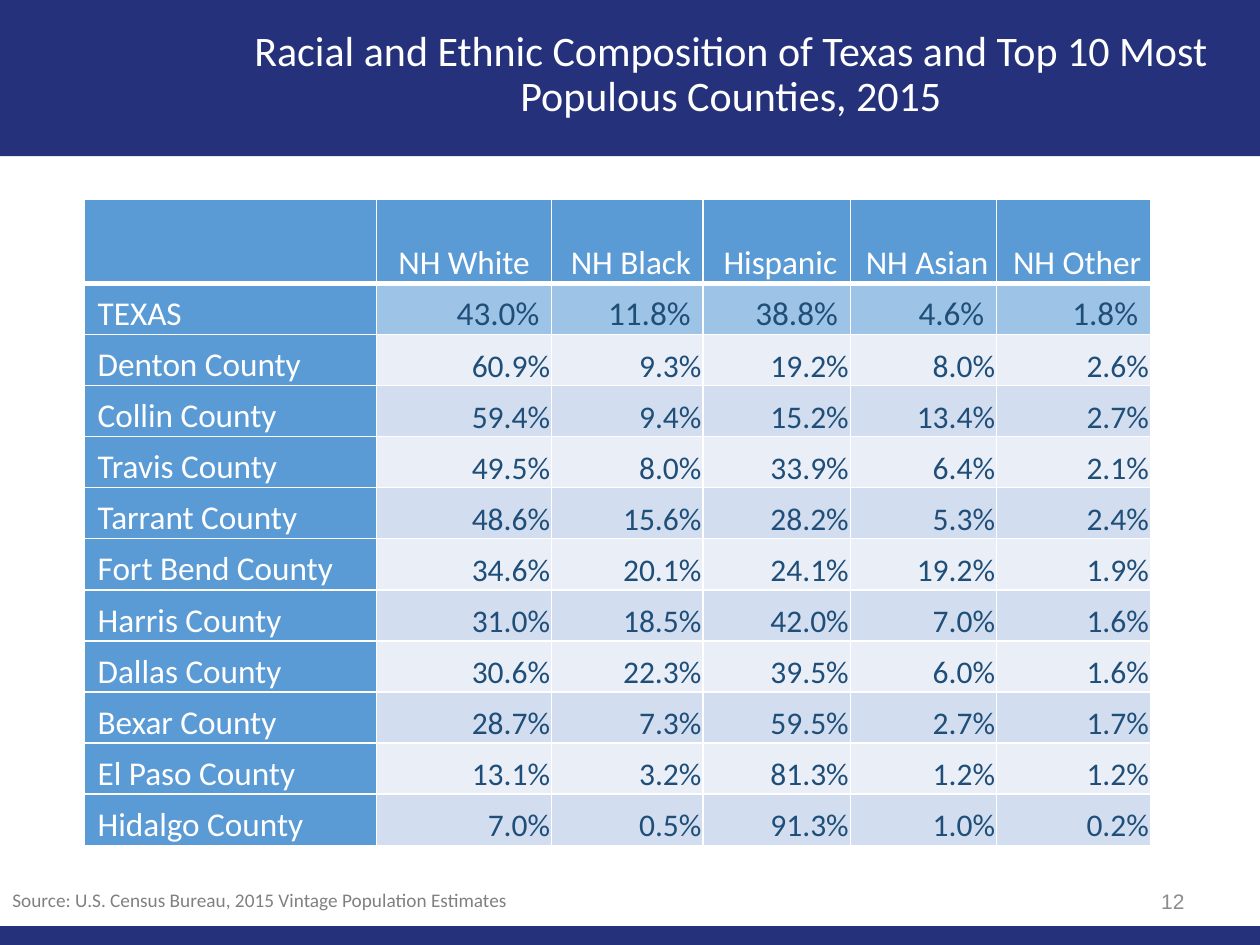
from lxml import etree
from pptx import Presentation
from pptx import util as u
from pptx.dml.color import RGBColor
from pptx.enum import shapes, text
from pptx.oxml import ns

COLOURS = {
    "navy": "25327B",
    "white": "FFFFFF",
    "heading": "5B9BD5",
    "state": "9DC3E6",
    "light": "EAEFF7",
    "dark": "D2DEEF",
    "figure": "1F4E79",
    "source": "808080",
    "number": "8C8C8C",
}
GROUPS = ["NH White", "NH Black", "Hispanic", "NH Asian", "NH Other"]
SHARES = [
    ("TEXAS", 43.0, 11.8, 38.8, 4.6, 1.8),
    ("Denton County", 60.9, 9.3, 19.2, 8.0, 2.6),
    ("Collin County", 59.4, 9.4, 15.2, 13.4, 2.7),
    ("Travis County", 49.5, 8.0, 33.9, 6.4, 2.1),
    ("Tarrant County", 48.6, 15.6, 28.2, 5.3, 2.4),
    ("Fort Bend County", 34.6, 20.1, 24.1, 19.2, 1.9),
    ("Harris County", 31.0, 18.5, 42.0, 7.0, 1.6),
    ("Dallas County", 30.6, 22.3, 39.5, 6.0, 1.6),
    ("Bexar County", 28.7, 7.3, 59.5, 2.7, 1.7),
    ("El Paso County", 13.1, 3.2, 81.3, 1.2, 1.2),
    ("Hidalgo County", 7.0, 0.5, 91.3, 1.0, 0.2),
]
COLUMN_WIDTHS = [5.89, 3.53, 3.05, 2.97, 2.95, 3.1]
HEADER_HEIGHT = 1.7
ROW_HEIGHT = 1.03
LEFT, CENTER, RIGHT = text.PP_ALIGN.LEFT, text.PP_ALIGN.CENTER, text.PP_ALIGN.RIGHT
MIDDLE, BOTTOM = text.MSO_ANCHOR.MIDDLE, text.MSO_ANCHOR.BOTTOM


def colour(name):
    return RGBColor.from_string(COLOURS[name])


def write(frame, words, size=19, ink="white", font="Calibri", align=LEFT, spacing=None):
    frame.word_wrap = True
    paragraph = frame.paragraphs[0]
    paragraph.alignment = align
    paragraph.line_spacing = spacing
    run = paragraph.add_run()
    run.text = words
    run.font.size = u.Pt(size)
    run.font.name = font
    run.font.bold = False
    run.font.color.rgb = colour(ink)


def add_band(slide, top, height):
    band = slide.shapes.add_shape(
        shapes.MSO_SHAPE.RECTANGLE, 0, u.Cm(top), u.Cm(25.4), u.Cm(height))
    band.shadow.inherit = False
    band.fill.solid()
    band.fill.fore_color.rgb = colour("navy")
    band.line.fill.background()


def add_label(slide, words, left, top, width, height, anchor=text.MSO_ANCHOR.TOP, **style):
    label = slide.shapes.add_textbox(u.Cm(left), u.Cm(top), u.Cm(width), u.Cm(height))
    label.text_frame.vertical_anchor = anchor
    write(label.text_frame, words, **style)


def set_borders(cell, top=1, bottom=1):
    properties = cell._tc.get_or_add_tcPr()
    widths = {"lnL": 1, "lnR": 1, "lnT": top, "lnB": bottom}
    for position, (side, width) in enumerate(widths.items()):
        edge = etree.Element(ns.qn(f"a:{side}"), w=str(u.Pt(width)))
        fill = etree.SubElement(edge, ns.qn("a:solidFill"))
        etree.SubElement(fill, ns.qn("a:srgbClr"), val=COLOURS["white"])
        properties.insert(position, edge)


def fill_cell(cell, words, fill, left=0.03, right=0.03, top_edge=1, bottom_edge=1, **style):
    cell.fill.solid()
    cell.fill.fore_color.rgb = colour(fill)
    cell.vertical_anchor = BOTTOM
    cell.margin_left, cell.margin_right = u.Cm(left), u.Cm(right)
    cell.margin_top, cell.margin_bottom = u.Cm(0.03), 0
    set_borders(cell, top_edge, bottom_edge)
    if words:
        write(cell.text_frame, words, **style)


def add_shares(slide):
    table = slide.shapes.add_table(
        len(SHARES) + 1, len(COLUMN_WIDTHS), u.Cm(1.7), u.Cm(4.01),
        u.Cm(sum(COLUMN_WIDTHS)), u.Cm(HEADER_HEIGHT + ROW_HEIGHT * len(SHARES))).table
    table.horz_banding = False
    for column, width in zip(table.columns, COLUMN_WIDTHS):
        column.width = u.Cm(width)
    for index, row in enumerate(table.rows):
        row.height = u.Cm(ROW_HEIGHT if index else HEADER_HEIGHT)

    for column, group in enumerate(["", *GROUPS]):
        fill_cell(table.cell(0, column), group, "heading", bottom_edge=3,
                  left=0.18 if column > 1 else 0.03, align=CENTER)

    for row, (place, *shares) in enumerate(SHARES, 1):
        is_state = row == 1
        top_edge = 3 if is_state else 1
        band = "state" if is_state else "dark" if row % 2 else "light"
        fill_cell(table.cell(row, 0), place, "heading", left=0.27, top_edge=top_edge)
        for column, share in enumerate(shares, 1):
            fill_cell(table.cell(row, column), f"{share:.1f}%", band,
                      right=0.25 if is_state else 0.03, top_edge=top_edge,
                      size=19 if is_state else 18, ink="figure", align=RIGHT)


def main():
    deck = Presentation()
    deck.slide_width, deck.slide_height = u.Cm(25.4), u.Cm(19.05)
    slide = deck.slides.add_slide(deck.slide_layouts[6])
    add_band(slide, 0, 3.15)
    add_band(slide, 18.67, 0.38)
    add_label(slide, "Racial and Ethnic Composition of Texas and Top 10 Most Populous Counties, 2015",
              4.32, 0.25, 20.83, 2.54, anchor=MIDDLE, size=24, align=CENTER, spacing=0.9)
    add_shares(slide)
    add_label(slide, "Source: U.S. Census Bureau, 2015 Vintage Population Estimates",
              0, 17.78, 22.23, 0.74, size=11, ink="source")
    add_label(slide, "12", 18.21, 17.65, 5.92, 1.02, anchor=MIDDLE,
              size=12, ink="number", font="Arial", align=RIGHT)
    deck.save("out.pptx")


if __name__ == "__main__":
    main()
